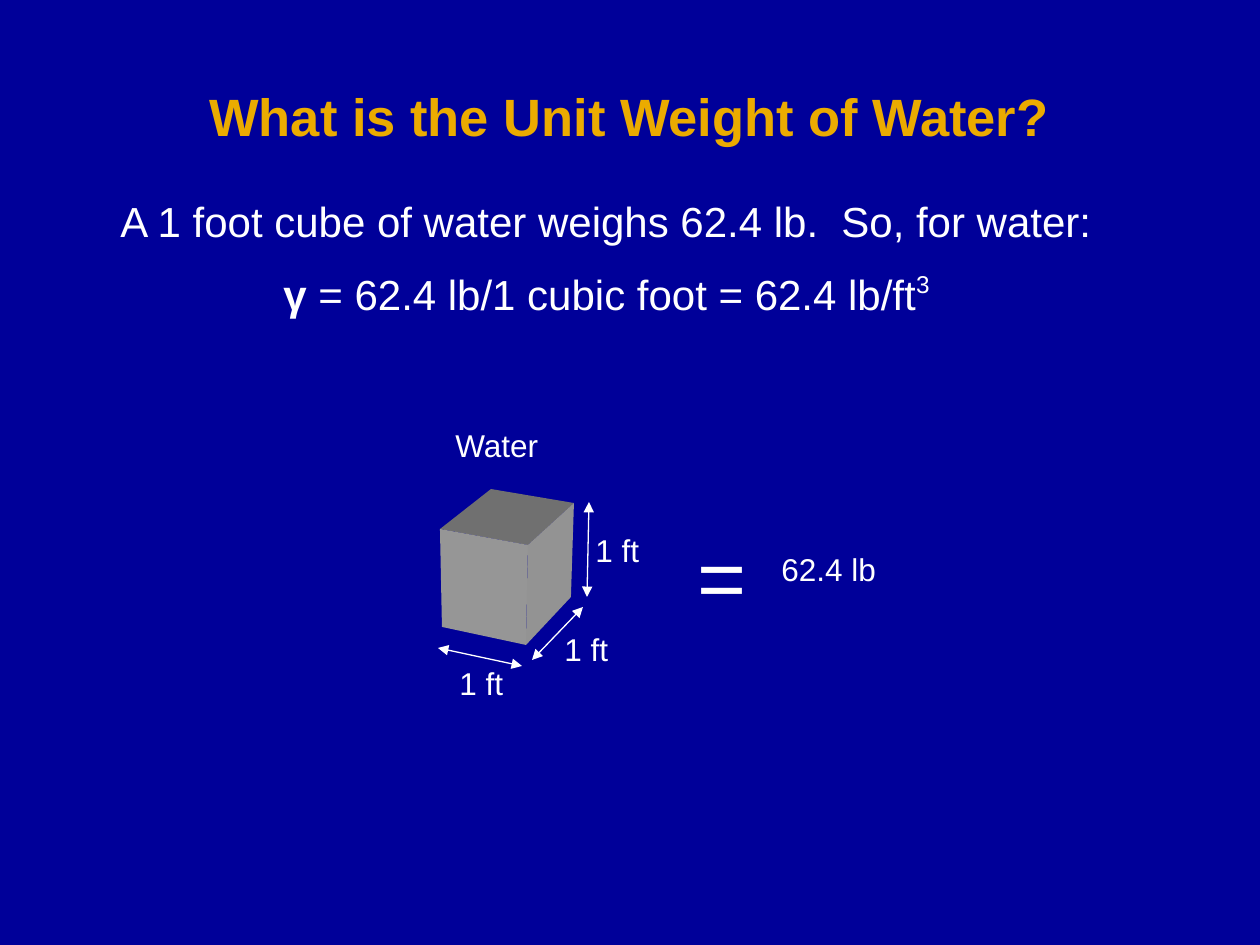
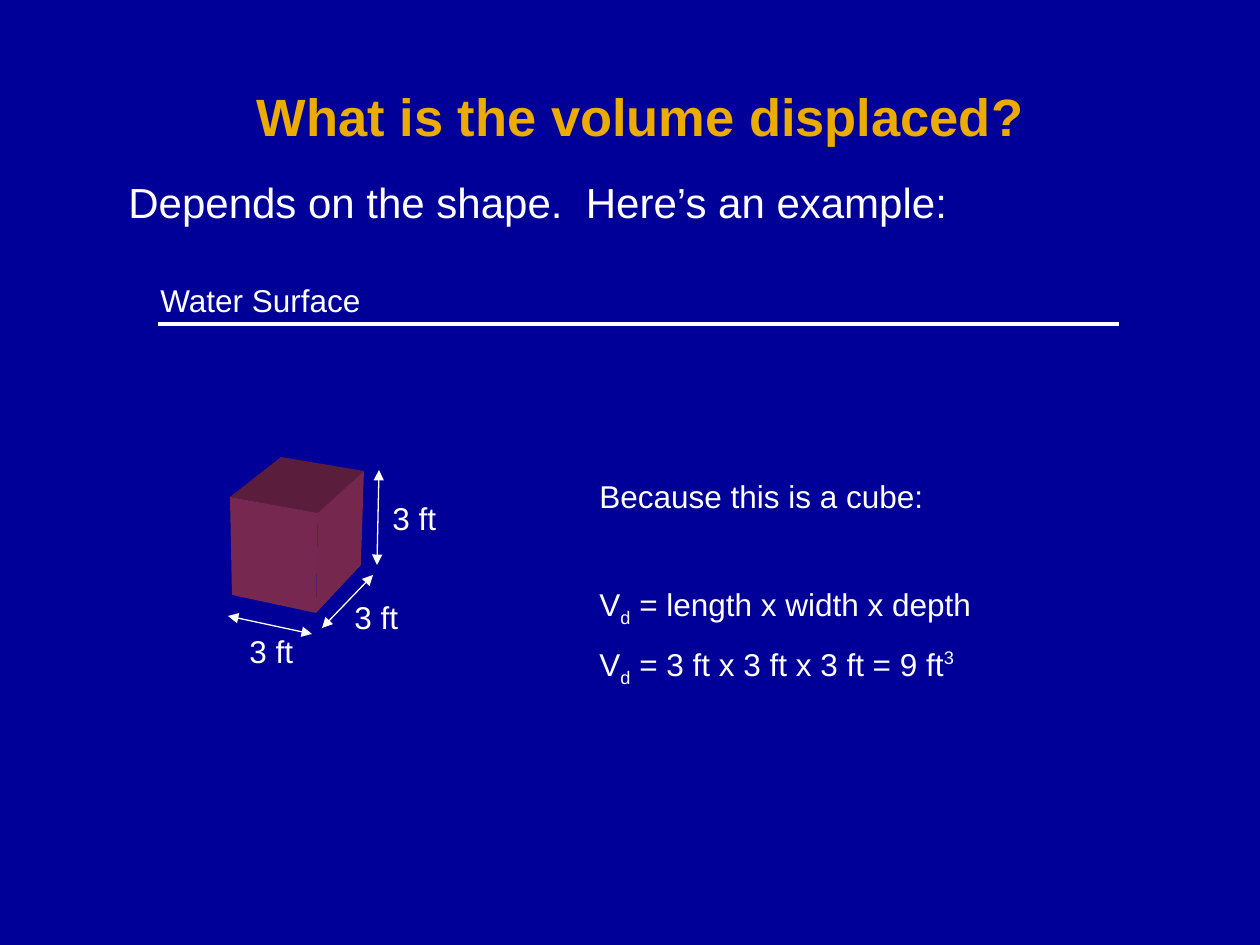
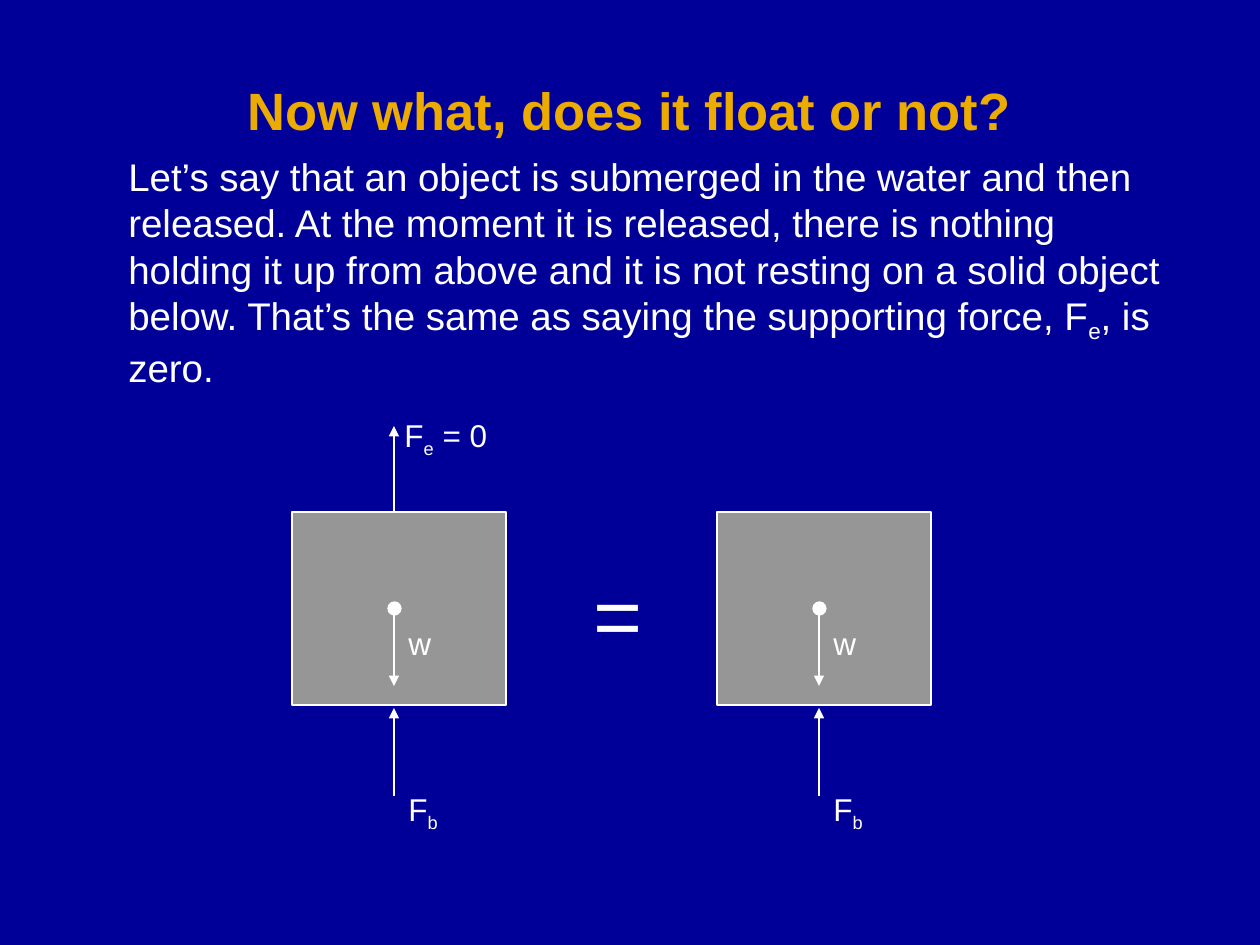
from pptx import Presentation
from pptx.dml.color import RGBColor
from pptx.enum.shapes import MSO_CONNECTOR, MSO_SHAPE
from pptx.enum.text import MSO_ANCHOR, PP_ALIGN
from pptx.oxml.ns import qn
from pptx.util import Pt
from lxml import etree

STRAIGHT = MSO_CONNECTOR.STRAIGHT
RECTANGLE, OVAL = MSO_SHAPE.RECTANGLE, MSO_SHAPE.OVAL
TOP, MIDDLE = MSO_ANCHOR.TOP, MSO_ANCHOR.MIDDLE
LEFT, CENTER = PP_ALIGN.LEFT, PP_ALIGN.CENTER

NAVY = RGBColor(0x00, 0x00, 0x99)
GOLD = RGBColor(0xEB, 0xAB, 0x00)
WHITE = RGBColor(0xFF, 0xFF, 0xFF)
GRAY = RGBColor(0x96, 0x96, 0x96)
# Cube faces: top, front, side
GRAY_FACES = (RGBColor(0x70, 0x70, 0x70), GRAY, RGBColor(0x93, 0x93, 0x93))
PLUM_FACES = (RGBColor(0x5A, 0x1E, 0x3C), RGBColor(0x77, 0x28, 0x50),
              RGBColor(0x75, 0x27, 0x4E))

FONT = "Arial"
TITLE_SIZE, BODY_SIZE, LABEL_SIZE, EQUALS_SIZE = 30, 24, 18, 48
SUBSCRIPT, SUPERSCRIPT = -25, 40
EMU_PER_PX = 914400 / 126
SLIDE_WIDTH, SLIDE_HEIGHT = 1260, 945
LABEL_HEIGHT = 50


def px(value):
    return round(value * EMU_PER_PX)


def add_text(slide, box, paragraphs, size=LABEL_SIZE, color=WHITE, bold=False,
             align=LEFT, anchor=TOP):
    """Each paragraph is (format values, runs); each run is (text, baseline, bold)."""
    if isinstance(paragraphs, str):
        paragraphs = [({}, [(paragraphs, 0, bold)])]
    frame = slide.shapes.add_textbox(*map(px, box)).text_frame
    frame.word_wrap = True
    frame.vertical_anchor = anchor
    for index, (values, runs) in enumerate(paragraphs):
        paragraph = frame.paragraphs[0] if index == 0 else frame.add_paragraph()
        paragraph.alignment = align
        if "indent" in values:
            paragraph._p.get_or_add_pPr().set("marL", str(px(values["indent"])))
        if "space_before" in values:
            paragraph.space_before = Pt(values["space_before"])
        for text, baseline, run_bold in runs:
            run = paragraph.add_run()
            run.text = text
            font_values = {"name": FONT, "size": Pt(size), "bold": run_bold}
            for name, value in font_values.items():
                setattr(run.font, name, value)
            run.font.color.rgb = color
            if baseline:
                run.font._element.set("baseline", str(baseline * 1000))


def symbol(letter, subscript, rest=""):
    runs = [(letter, 0, False), (subscript, SUBSCRIPT, False)]
    return runs + [(rest, 0, False)] if rest else runs


def add_title(slide, text, center_x, center_y):
    width, height = 1071, 126
    box = (center_x - width // 2, center_y - height // 2, width, height)
    add_text(slide, box, text, TITLE_SIZE, GOLD, True, CENTER, MIDDLE)


def add_equals(slide, left, top):
    add_text(slide, (left, top, 56, 113), "=", EQUALS_SIZE)


def add_line(slide, start, end, weight=0.75, arrow_ends=()):
    line = slide.shapes.add_connector(STRAIGHT, *map(px, (*start, *end)))
    line.line.color.rgb = WHITE
    line.line.width = Pt(weight)
    outline = line.line._get_or_add_ln()
    for end_name in arrow_ends:
        etree.SubElement(outline, qn(f"a:{end_name}"), type="triangle")
    etree.SubElement(line._element.spPr, qn("a:effectLst"))


def style_shape(shape, fill, outlined=False):
    shape.shadow.inherit = False
    shape.fill.solid()
    shape.fill.fore_color.rgb = fill
    if outlined:
        shape.line.color.rgb = WHITE
        shape.line.width = Pt(0.75)
    else:
        shape.line.fill.background()


def add_cube(slide, left, top, faces, label, height_label_x):
    """Cube with its three edges dimensioned, placed from its top left corner."""
    def at(x, y):
        return left + x, top + y

    # Faces, all drawn from the corners they share
    west, north, east, south = at(0, 40), at(51, 0), at(134, 14), at(88, 56)
    low_west, low_east, low_south = at(2, 138), at(131, 108), at(86, 156)
    outlines = ((west, north, east, south),
                (west, south, low_south, low_west),
                (south, east, low_east, low_south))
    for points, color in zip(outlines, faces):
        builder = slide.shapes.build_freeform(*points[0], scale=EMU_PER_PX)
        builder.add_line_segments(points[1:], close=True)
        style_shape(builder.convert_to_shape(), color)

    # Dimension arrows and their labels
    dimensions = (((-2, 159), (82, 177), (7, 169)),
                  ((92, 171), (143, 118), (112, 135)),
                  ((147, 108), (149, 13), (height_label_x, 36)))
    for start, end, label_at in dimensions:
        add_line(slide, at(*start), at(*end), arrow_ends=("headEnd", "tailEnd"))
        add_text(slide, (*at(*label_at), 151, LABEL_HEIGHT), label)


def add_force_block(slide, left, top, supported):
    """Block with weight and buoyancy, and the supporting force if it has one."""
    width, height, axis = 214, 193, left + 102
    block = slide.shapes.add_shape(RECTANGLE, *map(px, (left, top, width, height)))
    style_shape(block, GRAY, outlined=True)

    # Force arrows along the axis
    arrows = [(284, 196), (97, 174)]
    if supported:
        arrows.append((1, -86))
        add_text(slide, (axis - 2, top - 102, 122, LABEL_HEIGHT),
                 [({}, symbol("F", "e", " = 0"))])
    for start, end in arrows:
        add_line(slide, (axis, top + start), (axis, top + end),
                 arrow_ends=("tailEnd",))

    # Center of gravity and labels
    dot = slide.shapes.add_shape(OVAL, *map(px, (axis - 6, top + 90, 13, 13)))
    style_shape(dot, WHITE, outlined=True)
    add_text(slide, (axis + 2, top + 106, 53, LABEL_HEIGHT), "w")
    add_text(slide, (axis + 2, top + 272, 66, LABEL_HEIGHT),
             [({}, symbol("F", "b"))])


def build_unit_weight(slide):
    add_title(slide, "What is the Unit Weight of Water?", 629, 116)
    add_text(slide, (108, 189, 1000, 139), [
        ({}, [("A 1 foot cube of water weighs 62.4 lb.  So, for water:", 0, False)]),
        ({"indent": 163, "space_before": 13},
         [("γ", 0, True), (" = 62.4 lb/1 cubic foot = 62.4 lb/ft", 0, False),
          ("3", SUPERSCRIPT, False)]),
    ], BODY_SIZE)
    add_text(slide, (443, 420, 151, LABEL_HEIGHT), "Water")
    add_cube(slide, 440, 489, GRAY_FACES, "1 ft", 143)
    add_equals(slide, 685, 518)
    add_text(slide, (769, 544, 151, LABEL_HEIGHT), "62.4 lb")


def build_volume(slide):
    add_title(slide, "What is the volume displaced?", 640, 116)
    add_text(slide, (116, 170, 1000, 63),
             "Depends on the shape.  Here’s an example:", BODY_SIZE)
    # Water surface
    add_text(slide, (148, 275, 340, LABEL_HEIGHT), "Water Surface")
    add_line(slide, (158, 324), (1119, 324), weight=2)
    add_cube(slide, 230, 457, PLUM_FACES, "3 ft", 150)
    # Calculation
    add_text(slide, (587, 471, 493, 222), [
        ({}, [("Because this is a cube:", 0, False)]),
        ({"space_before": 40}, symbol("V", "d", " = length x width x depth")),
        ({"space_before": 10}, symbol("V", "d", " = 3 ft x 3 ft x 3 ft = 9 ft")
         + [("3", SUPERSCRIPT, False)]),
    ])


def build_floating(slide):
    add_title(slide, "Now what, does it float or not?", 629, 110)
    statement = ("Let’s say that an object is submerged in the water and then "
                 "released. At the moment it is released, there is nothing holding "
                 "it up from above and it is not resting on a solid object below. "
                 "That’s the same as saying the supporting force, F")
    add_text(slide, (116, 147, 1062, 246),
             [({}, symbol(statement, "e", ", is zero."))], 22)
    add_force_block(slide, 292, 512, supported=True)
    add_equals(slide, 581, 556)
    add_force_block(slide, 717, 512, supported=False)


def main():
    presentation = Presentation()
    presentation.slide_width = px(SLIDE_WIDTH)
    presentation.slide_height = px(SLIDE_HEIGHT)
    background = presentation.slide_master.background.fill
    background.solid()
    background.fore_color.rgb = NAVY
    blank_layout = presentation.slide_layouts[6]
    for build in (build_unit_weight, build_volume, build_floating):
        build(presentation.slides.add_slide(blank_layout))
    presentation.save("out.pptx")


if __name__ == "__main__":
    main()
